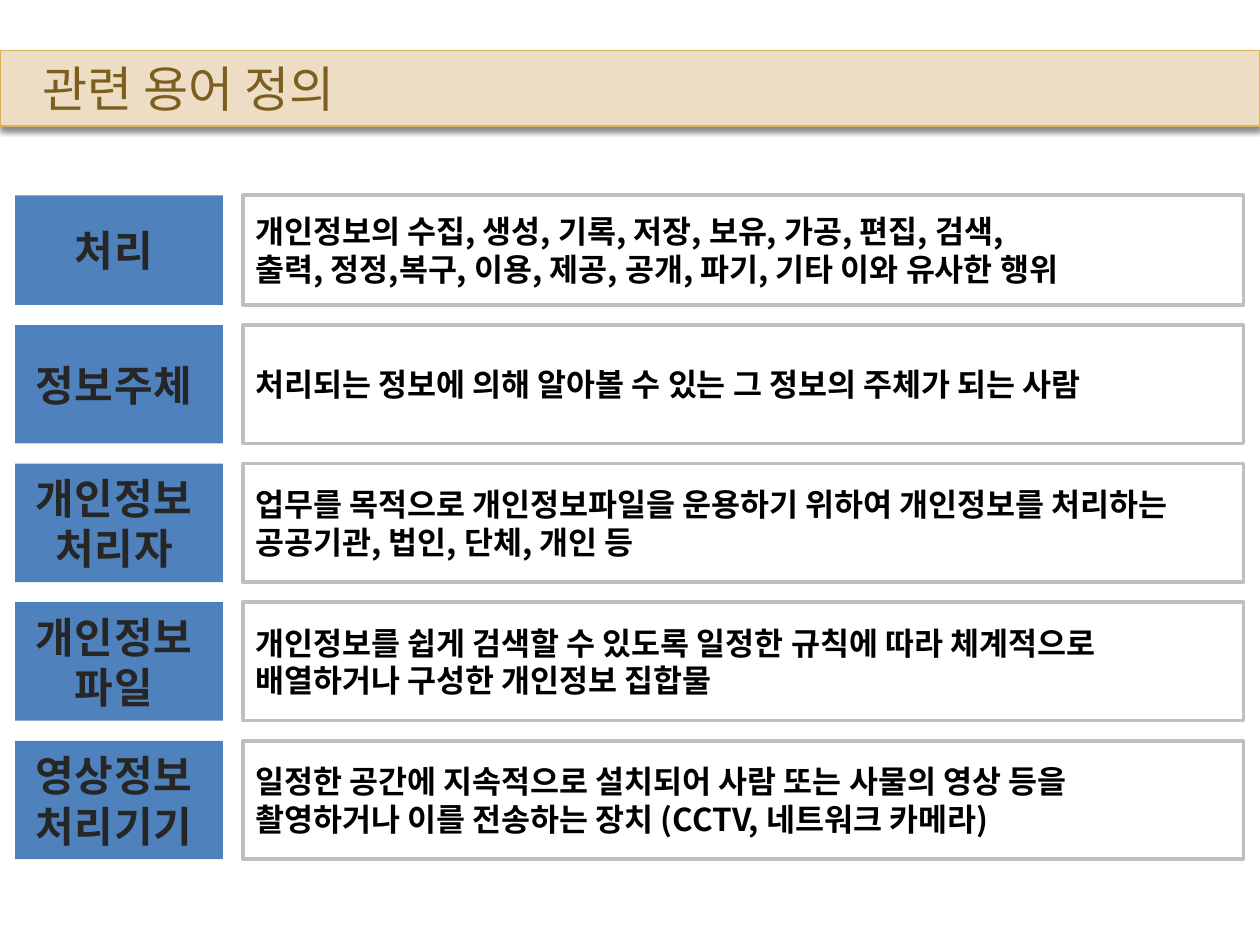
"""Build a slide that defines five personal-information terms."""
import pptx
import pptx.dml.color
import pptx.enum.shapes
import pptx.enum.text
import pptx.oxml
import pptx.oxml.ns
import pptx.util

Inches = pptx.util.Inches
Pt = pptx.util.Pt
RGBColor = pptx.dml.color.RGBColor
RECTANGLE = pptx.enum.shapes.MSO_SHAPE.RECTANGLE
PP_ALIGN = pptx.enum.text.PP_ALIGN
MIDDLE = pptx.enum.text.MSO_ANCHOR.MIDDLE
NO_FIT = pptx.enum.text.MSO_AUTO_SIZE.NONE
qn = pptx.oxml.ns.qn

FONT = "Noto Sans CJK KR"
SAND = RGBColor(0xED, 0xDD, 0xC4)
GOLD = RGBColor(0xD8, 0xB2, 0x5C)
BROWN = RGBColor(0x7C, 0x5F, 0x1E)
BLUE = RGBColor(0x4F, 0x81, 0xBD)
GRAY = RGBColor(0xBF, 0xBF, 0xBF)
BLACK = RGBColor(0x00, 0x00, 0x00)
CHARCOAL = RGBColor(0x26, 0x26, 0x26)

SHADOW = (
    f'<a:effectLst {pptx.oxml.ns.nsdecls("a")}>'
    '<a:outerShdw blurRad="38100" dist="30480" dir="5400000" rotWithShape="0">'
    '<a:srgbClr val="000000"><a:alpha val="45000"/></a:srgbClr>'
    '</a:outerShdw></a:effectLst>'
)

TERM_LEFT, TERM_WIDTH = Inches(0.12), Inches(1.65)
LABEL_LEFT, LABEL_WIDTH = Inches(0.04), Inches(1.73)
BODY_LEFT, BODY_WIDTH = Inches(1.93), Inches(7.94)
ROW_GAP = Inches(0.16)
ROWS = [
    (0.87, ["처리"],
     ["개인정보의 수집, 생성, 기록, 저장, 보유, 가공, 편집, 검색,",
      "출력, 정정,복구, 이용, 제공, 공개, 파기, 기타 이와 유사한 행위"]),
    (0.94, ["정보주체"],
     ["처리되는 정보에 의해 알아볼 수 있는 그 정보의 주체가 되는 사람"]),
    (0.94, ["개인정보", "처리자"],
     ["업무를 목적으로 개인정보파일을 운용하기 위하여 개인정보를 처리하는 "
      "공공기관, 법인, 단체, 개인 등"]),
    (0.94, ["개인정보", "파일"],
     ["개인정보를 쉽게 검색할 수 있도록 일정한 규칙에 따라 체계적으로 "
      "배열하거나 구성한 개인정보 집합물"]),
    (0.94, ["영상정보", "처리기기"],
     ["일정한 공간에 지속적으로 설치되어 사람 또는 사물의 영상 등을",
      "촬영하거나 이를 전송하는 장치 (CCTV, 네트워크 카메라)"]),
]


def write(sp, lines, size, color, bold, align, spacing=0):
    tf = sp.text_frame
    tf.word_wrap = True
    tf.auto_size = NO_FIT
    tf.vertical_anchor = MIDDLE
    tf.text = "\n".join(lines)
    for p in tf.paragraphs:
        p.alignment = align
        p.font.name = FONT
        p.font.size = Pt(size)
        p.font.bold = bold
        p.font.color.rgb = color
        props = p._p.pPr.find(qn("a:defRPr"))
        props.set("spc", str(spacing))
        props.append(pptx.oxml.parse_xml(
            f'<a:ea {pptx.oxml.ns.nsdecls("a")} typeface="{FONT}"/>'))


def add_box(s, left, top, width, height):
    sp = s.shapes.add_shape(RECTANGLE, left, top, width, height)
    sp.shadow.inherit = False
    return sp


prs = pptx.Presentation()
prs.slide_width, prs.slide_height = Inches(10), Inches(7.5)
s = prs.slides.add_slide(prs.slide_layouts[5])

title = s.shapes.title
title.left, title.top = 0, Inches(0.4)
title.width, title.height = prs.slide_width, Inches(0.6)
title.fill.solid()
title.fill.fore_color.rgb = SAND
title.line.color.rgb = GOLD
title.line.width = Pt(0.79)
title._element.spPr.append(pptx.oxml.parse_xml(SHADOW))
write(title, ["관련 용어 정의"], 28, BROWN, False, PP_ALIGN.LEFT)
title.text_frame.margin_left = Inches(0.34)

top = Inches(1.55)
for row_height, term, definition in ROWS:
    height = Inches(row_height)

    sp = add_box(s, TERM_LEFT, top, TERM_WIDTH, height)
    sp.fill.solid()
    sp.fill.fore_color.rgb = BLUE
    sp.line.fill.background()

    sp = add_box(s, BODY_LEFT, top, BODY_WIDTH, height)
    sp.fill.background()
    sp.line.color.rgb = GRAY
    sp.line.width = Pt(2)
    write(sp, definition, 18, BLACK, True, PP_ALIGN.LEFT)

    label_height = Inches(0.1 + 0.4 * len(term))
    sp = s.shapes.add_textbox(LABEL_LEFT, top + (height - label_height) // 2,
                              LABEL_WIDTH, label_height)
    write(sp, term, 24, CHARCOAL, True, PP_ALIGN.CENTER, spacing=50)

    top += height + ROW_GAP

prs.save("out.pptx")
